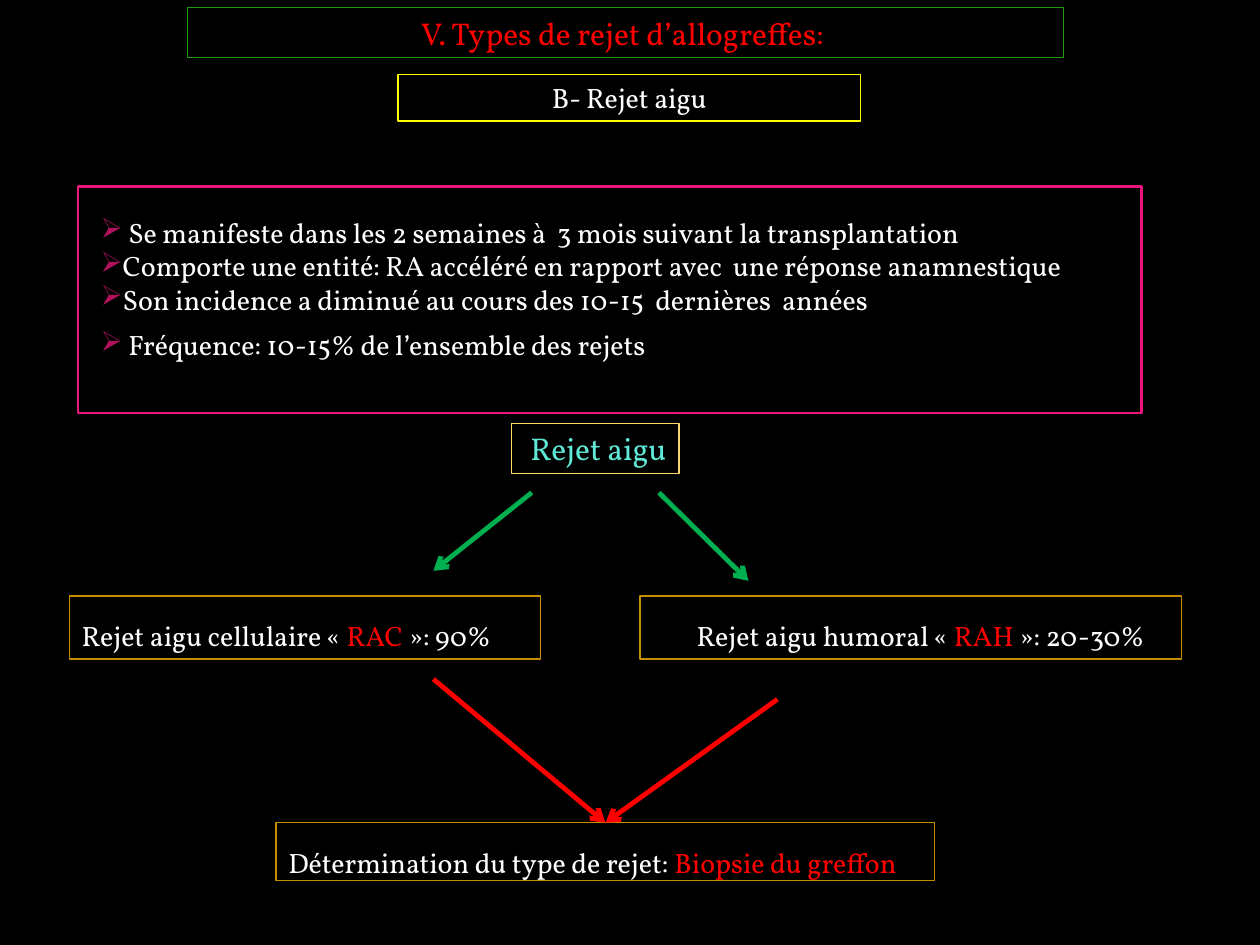
"""Build the slide on acute allograft rejection and its two forms."""
from lxml.etree import SubElement
from pptx import Presentation
from pptx.dml.color import RGBColor
from pptx.enum.shapes import MSO_CONNECTOR, MSO_SHAPE
from pptx.enum.text import MSO_ANCHOR, PP_ALIGN
from pptx.oxml.ns import qn
from pptx.util import Inches, Pt

FONT = "Vollkorn"
WHITE, RED, GREEN, GOLD, AQUA = "FFFFFF", "FF0000", "00B050", "C58D01", "5FE8D6"
BULLET, BULLET_COLOR = "➢", "B0105C"
CENTER, LEFT = PP_ALIGN.CENTER, PP_ALIGN.LEFT

BOXES = {
    "title": {"at": (1.49, 0.06, 6.95, 0.4), "line": ("219B11", 0.75), "size": 18, "align": CENTER,
              "paras": [[("V. Types de rejet d’allogreffes: ", RED)]]},
    "subtitle": {"at": (3.16, 0.59, 3.67, 0.37), "line": ("FFFF00", 0.75), "align": CENTER,
                 "paras": [[("B- Rejet aigu", WHITE)]]},
    "frame": {"at": (0.62, 1.48, 8.44, 1.8), "line": ("EA157A", 1.5), "paras": []},
    "facts": {"at": (0.7, 1.66, 8.44, 1.18), "bullet": True, "paras": [
        [(" Se manifeste dans les 2 semaines à  3 mois suivant la transplantation", WHITE)],
        [("Comporte une entité: RA accéléré en rapport avec  une réponse anamnestique", WHITE)],
        [("Son incidence a diminué au cours des 10-15  dernières  années", WHITE)]]},
    "frequency": {"at": (0.7, 2.42, 4.54, 0.58), "bullet": True, "spacing": 1.5, "wrap": False,
                  "paras": [[(" Fréquence: 10-15% de l’ensemble des rejets", WHITE)]]},
    "cellular": {"at": (0.55, 4.73, 3.74, 0.5), "line": (GOLD, 0.75), "spacing": 1.5, "paras": [
        [("Rejet aigu cellulaire « ", WHITE), ("RAC", RED), (" »: 90%", WHITE)]]},
    "humoral": {"at": (5.08, 4.73, 4.3, 0.5), "line": (GOLD, 0.75), "spacing": 1.5, "inset": 0.45,
                "paras": [[("Rejet aigu humoral « ", WHITE), ("RAH ", RED), ("»: 20-30%", WHITE)]]},
    "biopsy": {"at": (2.19, 6.53, 5.23, 0.46), "line": (GOLD, 0.75), "spacing": 1.5, "paras": [
        [("Détermination du type de rejet: ", WHITE), ("Biopsie du greffon", RED)]]},
    "rejection": {"at": (4.06, 3.36, 1.33, 0.4), "line": ("FED46C", 0.75), "size": 18,
                  "align": CENTER, "wrap": False, "paras": [[(" Rejet aigu", AQUA)]]},
}

ARROWS = [
    ((5.23, 3.91), (5.94, 4.61), GREEN, None),
    ((4.22, 3.91), (3.44, 4.53), GREEN, None),
    ((6.17, 5.55), (4.8, 6.53), RED, "biopsy"),
    ((3.44, 5.39), (4.8, 6.53), RED, "biopsy"),
]


def color(value):
    return RGBColor.from_string(value)


def add_bullet(para):
    properties = para._p.get_or_add_pPr()
    bullet_color = SubElement(properties, qn("a:buClr"))
    SubElement(bullet_color, qn("a:srgbClr"), val=BULLET_COLOR)
    SubElement(properties, qn("a:buChar"), char=BULLET)


def add_text(box, item):
    frame = box.text_frame
    settings = {"word_wrap": item.get("wrap", True), "vertical_anchor": MSO_ANCHOR.TOP,
                "margin_left": Inches(item.get("inset", 0.1))}
    for name, value in settings.items():
        setattr(frame, name, value)
    for index, spans in enumerate(item["paras"]):
        para = frame.add_paragraph() if index else frame.paragraphs[0]
        layout = {"alignment": item.get("align", LEFT), "line_spacing": item.get("spacing", 1.0)}
        for name, value in layout.items():
            setattr(para, name, value)
        if item.get("bullet"):
            add_bullet(para)
        for text, tint in spans:
            span = para.add_run()
            span.text = text
            for name, value in {"name": FONT, "size": Pt(item.get("size", 16))}.items():
                setattr(span.font, name, value)
            span.font.color.rgb = color(tint)


def add_box(page, item):
    place = [Inches(value) for value in item["at"]]
    if "line" in item:
        box = page.shapes.add_shape(MSO_SHAPE.RECTANGLE, *place)
        box.shadow.inherit = False
        box.fill.background()
        tint, width = item["line"]
        box.line.color.rgb = color(tint)
        box.line.width = Pt(width)
    else:
        box = page.shapes.add_textbox(*place)
    add_text(box, item)
    return box


def add_arrow(page, start, end, tint, target):
    points = [Inches(value) for value in start + end]
    arrow = page.shapes.add_connector(MSO_CONNECTOR.STRAIGHT, *points)
    if target:
        arrow.end_connect(target, 0)
    arrow.line.color.rgb = color(tint)
    arrow.line.width = Pt(2.75)
    SubElement(arrow.line._get_or_add_ln(), qn("a:tailEnd"), type="arrow")
    SubElement(arrow._element.spPr, qn("a:effectLst"))


def main():
    deck = Presentation()
    deck.slide_width, deck.slide_height = Inches(10), Inches(7.5)
    page = deck.slides.add_slide(deck.slide_layouts[6])
    page.background.fill.solid()
    page.background.fill.fore_color.rgb = color("000000")
    boxes = {name: add_box(page, item) for name, item in BOXES.items()}
    for start, end, tint, target in ARROWS:
        add_arrow(page, start, end, tint, boxes.get(target))
    deck.save("out.pptx")


if __name__ == "__main__":
    main()
